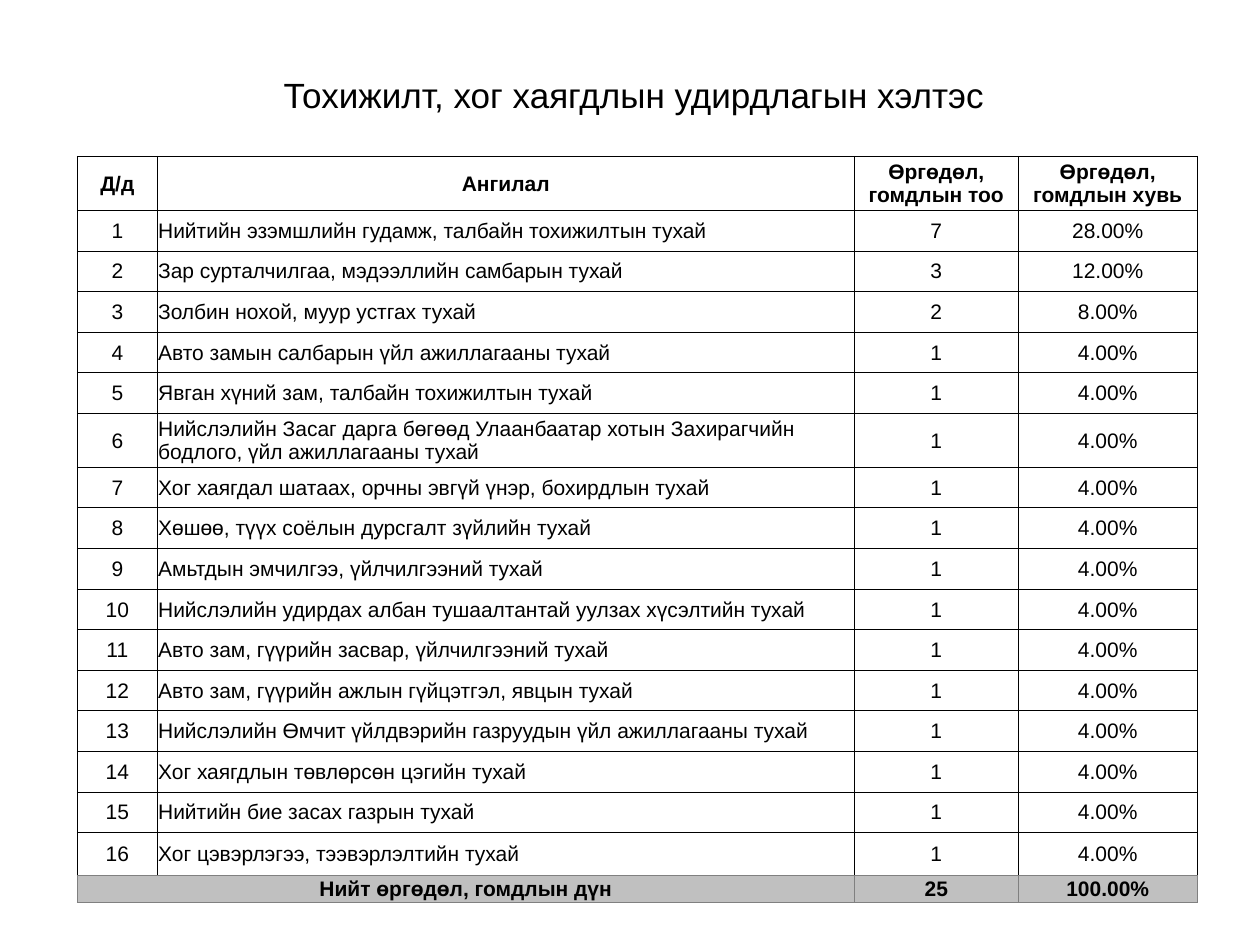
import pptx
import pptx.util
import pptx.dml.color
import pptx.enum.text
import pptx.oxml
import pptx.oxml.ns
import lxml.etree
from dataclasses import dataclass

Pt = pptx.util.Pt
Align = pptx.enum.text.PP_ALIGN
Anchor = pptx.enum.text.MSO_ANCHOR


@dataclass(frozen=True)
class Theme:
    font: str = "Arial"
    ink: str = "000000"
    paper: str = "FFFFFF"
    band: str = "C0C0C0"
    edge: str = "808080"
    title: float = 20
    body: float = 12
    line: float = 0.5


THEME = Theme()

TITLE = "Тохижилт, хог хаягдлын удирдлагын хэлтэс "
HEADS = ["Д/д", "Ангилал", "Өргөдөл, гомдлын тоо", "Өргөдөл, гомдлын хувь"]
TOTAL = "Нийт өргөдөл, гомдлын дүн"
ITEMS = [
    ("Нийтийн эзэмшлийн гудамж, талбайн тохижилтын тухай", 7),
    ("Зар сурталчилгаа, мэдээллийн самбарын тухай", 3),
    ("Золбин нохой, муур устгах тухай", 2),
    ("Авто замын салбарын үйл ажиллагааны тухай", 1),
    ("Явган хүний зам, талбайн тохижилтын тухай", 1),
    ("Нийслэлийн Засаг дарга бөгөөд Улаанбаатар хотын Захирагчийн "
     "бодлого, үйл ажиллагааны тухай", 1),
    ("Хог хаягдал шатаах, орчны эвгүй үнэр, бохирдлын тухай", 1),
    ("Хөшөө, түүх соёлын дурсгалт зүйлийн тухай", 1),
    ("Амьтдын эмчилгээ, үйлчилгээний тухай", 1),
    ("Нийслэлийн удирдах албан тушаалтантай уулзах хүсэлтийн тухай", 1),
    ("Авто зам, гүүрийн засвар, үйлчилгээний тухай", 1),
    ("Авто зам, гүүрийн ажлын гүйцэтгэл, явцын тухай", 1),
    ("Нийслэлийн Өмчит үйлдвэрийн газруудын үйл ажиллагааны тухай", 1),
    ("Хог хаягдлын төвлөрсөн цэгийн тухай", 1),
    ("Нийтийн бие засах газрын тухай", 1),
    ("Хог цэвэрлэгээ, тээвэрлэлтийн тухай", 1),
]

# Table sizes in points
COLS = [45.7, 398.3, 93.7, 102.3]
TALL, ROW, LAST, FOOT = 30.9, 23.2, 24.6, 15.4
WRAPPED = 6


def color(code):
    return pptx.dml.color.RGBColor.from_string(code)


def write(frame, text, size=THEME.body, bold=False, align=Align.CENTER,
          space=None):
    para = frame.paragraphs[0]
    para.alignment = align
    if space:
        para.line_spacing = space
    run = para.add_run()
    run.text = text
    font = run.font
    font.name, font.size, font.bold = THEME.font, Pt(size), bold
    font.color.rgb = color(THEME.ink)


def border(cell, edge, base):
    props = cell._tc.get_or_add_tcPr()
    tint = {"L": edge, "R": edge, "T": edge, "B": base}
    for spot, (side, code) in enumerate(tint.items()):
        line = pptx.oxml.parse_xml(
            f'<a:ln{side} {pptx.oxml.ns.nsdecls("a")} w="{Pt(THEME.line)}">'
            f'<a:solidFill><a:srgbClr val="{code}"/></a:solidFill>'
            f'</a:ln{side}>')
        props.insert(spot, line)


def style(cell, fill, edge, base):
    cell.vertical_anchor = Anchor.MIDDLE
    cell.margin_left = cell.margin_right = cell.margin_top = Pt(0.5)
    cell.margin_bottom = 0
    cell.fill.solid()
    cell.fill.fore_color.rgb = color(fill)
    border(cell, edge, base)


def title(slide):
    box = slide.shapes.add_textbox(Pt(54.7), Pt(41), Pt(620.6), Pt(28.8))
    frame = box.text_frame
    frame.word_wrap = True
    frame.vertical_anchor = Anchor.MIDDLE
    write(frame, TITLE, size=THEME.title, space=0.9)


def table(slide):
    # Contents: header, numbered items with their shares, total
    total = sum(count for _, count in ITEMS)
    rows = [HEADS]
    for num, (name, count) in enumerate(ITEMS, 1):
        rows.append([str(num), name, str(count), f"{count / total:.2%}"])
    rows.append([TOTAL, "", str(total), f"{1:.2%}"])
    foot = len(rows) - 1

    # Grid
    highs = [ROW] * len(rows)
    highs[0] = highs[WRAPPED] = TALL
    highs[-2:] = [LAST, FOOT]
    grid = slide.shapes.add_table(
        len(rows), len(COLS), Pt(44.2), Pt(89.3),
        Pt(sum(COLS)), Pt(sum(highs))).table
    grid.first_row = grid.horz_banding = False
    for col, wide in zip(grid.columns, COLS):
        col.width = Pt(wide)
    for row, high in zip(grid.rows, highs):
        row.height = Pt(high)

    # Cells
    for r, texts in enumerate(rows):
        fill = THEME.band if r == foot else THEME.paper
        edge = THEME.edge if r == foot else THEME.ink
        base = THEME.edge if r >= foot - 1 else THEME.ink
        for c, text in enumerate(texts):
            cell = grid.cell(r, c)
            style(cell, fill, edge, base)
            if text:
                left = c == 1 and 0 < r < foot
                write(cell.text_frame, text, bold=r in (0, foot),
                      align=Align.LEFT if left else Align.CENTER)
    grid.cell(foot, 0).merge(grid.cell(foot, 1))


def main():
    deck = pptx.Presentation()
    deck.slide_width, deck.slide_height = Pt(720), Pt(540)
    slide = deck.slides.add_slide(deck.slide_layouts[6])
    table(slide)
    title(slide)
    deck.save("out.pptx")


if __name__ == "__main__":
    main()
